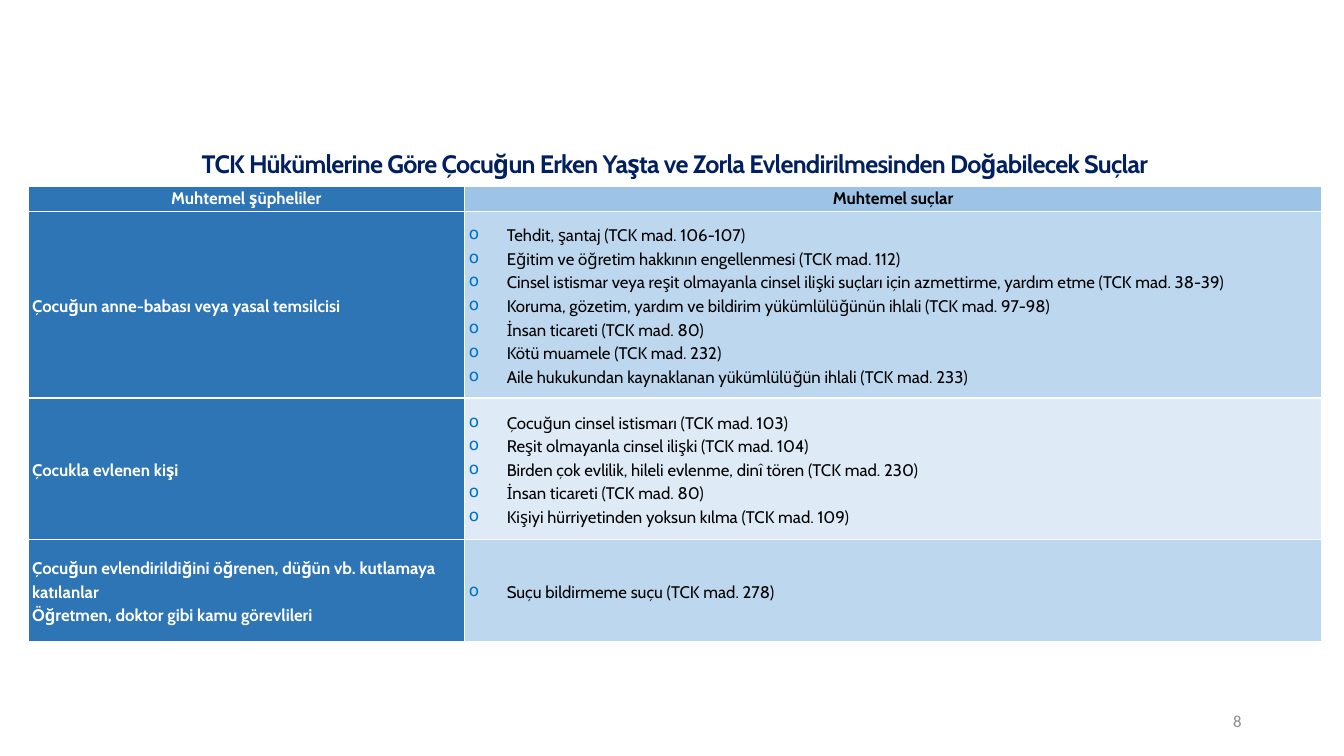
"""Builds a slide with a table of suspects and possible offences under the TCK."""
from lxml import etree
from pptx import Presentation
from pptx.dml.color import RGBColor
from pptx.enum import text as t
from pptx.oxml import ns
from pptx.util import Pt


def style(paragraph, font, size, color, bold=False):
    paragraph.font.name = font
    paragraph.font.size = Pt(size)
    paragraph.font.bold = bold
    paragraph.font.color.rgb = RGBColor.from_string(color)


def add_border(cell, side, width):
    props = cell._tc.get_or_add_tcPr()
    line = etree.SubElement(props, ns.qn(f"a:ln{side}"), w=str(Pt(width)))
    fill = etree.SubElement(line, ns.qn("a:solidFill"))
    etree.SubElement(fill, ns.qn("a:srgbClr"), val="FFFFFF")


title = "TCK Hükümlerine Göre Çocuğun Erken Yaşta ve Zorla Evlendirilmesinden Doğabilecek Suçlar"
headings = ["Muhtemel şüpheliler", "Muhtemel suçlar"]
offences_by_suspect = [
    (["Çocuğun anne-babası veya yasal temsilcisi"],
     ["Tehdit, şantaj (TCK mad. 106-107)",
      "Eğitim ve öğretim hakkının engellenmesi (TCK mad. 112)",
      "Cinsel istismar veya reşit olmayanla cinsel ilişki suçları için azmettirme, yardım etme (TCK mad. 38-39)",
      "Koruma, gözetim, yardım ve bildirim yükümlülüğünün ihlali (TCK mad. 97-98)",
      "İnsan ticareti (TCK mad. 80)",
      "Kötü muamele (TCK mad. 232)",
      "Aile hukukundan kaynaklanan yükümlülüğün ihlali (TCK mad. 233)"]),
    (["Çocukla evlenen kişi"],
     ["Çocuğun cinsel istismarı (TCK mad. 103)",
      "Reşit olmayanla cinsel ilişki (TCK mad. 104)",
      "Birden çok evlilik, hileli evlenme, dinî tören (TCK mad. 230)",
      "İnsan ticareti (TCK mad. 80)",
      "Kişiyi hürriyetinden yoksun kılma (TCK mad. 109)"]),
    (["Çocuğun evlendirildiğini öğrenen, düğün vb. kutlamaya katılanlar",
      "Öğretmen, doktor gibi kamu görevlileri"],
     ["Suçu bildirmeme suçu (TCK mad. 278)"]),
]
column_widths = [312, 612]
row_heights = [26, 18.7, 133.2, 100.8, 73.4]
offence_fills = ["9DC3E6", "BDD7EE", "DEEBF7", "BDD7EE"]

deck = Presentation()
deck.slide_width, deck.slide_height = Pt(960), Pt(540)
slide = deck.slides.add_slide(deck.slide_layouts[6])

table = slide.shapes.add_table(
    len(row_heights), len(column_widths), Pt(20), Pt(106.5),
    Pt(sum(column_widths)), Pt(sum(row_heights))).table
table.first_row = table.horz_banding = False
for column, width in zip(table.columns, column_widths):
    column.width = Pt(width)
for row, height in zip(table.rows, row_heights):
    row.height = Pt(height)

for r, row in enumerate(table.rows):
    for cell in row.cells:
        cell.margin_left = cell.margin_right = Pt(3)
        cell.margin_top = cell.margin_bottom = 0
        for side in "LRTB":
            thick = (r, side) in [(0, "B"), (1, "T")]
            add_border(cell, side, 3 if thick else 1)
        cell.fill.background()

title_cell = table.cell(0, 0)
title_cell.merge(table.cell(0, 1))
title_cell.text = title
heading = title_cell.text_frame.paragraphs[0]
heading.alignment = t.PP_ALIGN.CENTER
style(heading, "Cabin", 18, "002060", True)
heading.font._rPr.set("spc", "-50")

body = [([suspect], [offence]) for suspect, offence in [headings]] + offences_by_suspect
for r, (row_texts, offence_fill) in enumerate(zip(body, offence_fills), 1):
    for c, (lines, fill) in enumerate(zip(row_texts, ["2E75B6", offence_fill])):
        cell = table.cell(r, c)
        cell.fill.solid()
        cell.fill.fore_color.rgb = RGBColor.from_string(fill)
        cell.text = "\n".join(lines)
        is_heading = r == 1
        is_offence = c == 1 and not is_heading
        if not is_heading:
            cell.vertical_anchor = t.MSO_ANCHOR.MIDDLE
        for paragraph in cell.text_frame.paragraphs:
            paragraph.line_spacing = 1.15
            if is_heading:
                paragraph.alignment = t.PP_ALIGN.CENTER
            if is_offence:
                paragraph.alignment = t.PP_ALIGN.JUSTIFY
                props = paragraph._p.get_or_add_pPr()
                props.set("marL", str(Pt(27)))
                props.set("indent", str(Pt(-27)))
                bullet_color = etree.SubElement(props, ns.qn("a:buClr"))
                etree.SubElement(bullet_color, ns.qn("a:srgbClr"), val="0070C0")
                etree.SubElement(props, ns.qn("a:buChar"), char="o")
            style(paragraph, "Cabin", 12, "000000" if c else "FFFFFF", not is_offence)

number_box = slide.shapes.add_textbox(Pt(678), Pt(500.5), Pt(216), Pt(28.8)).text_frame
number_box.word_wrap = True
number_box.vertical_anchor = t.MSO_ANCHOR.MIDDLE
number_box.text = "8"
page_number = number_box.paragraphs[0]
page_number.alignment = t.PP_ALIGN.RIGHT
style(page_number, "Calibri", 12, "8C8C8C")

deck.save("out.pptx")
